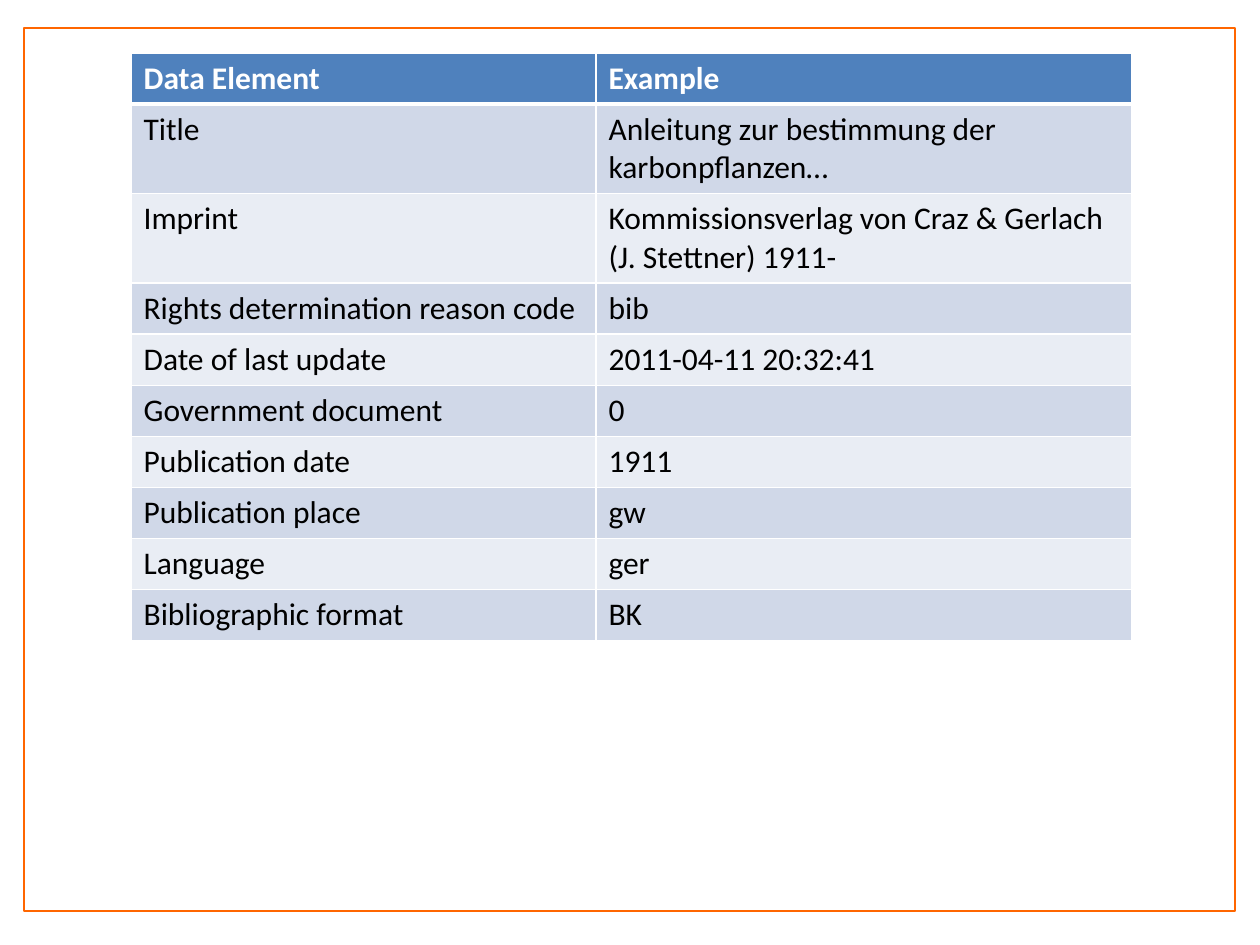
import pptx
import pptx.dml.color
import pptx.enum.shapes
import pptx.oxml.ns
import pptx.util
from lxml import etree

Inches = pptx.util.Inches
Pt = pptx.util.Pt

COLORS = {
    "white": "FFFFFF",
    "black": "000000",
    "frame": "FF6600",
    "header": "4F81BD",
    "odd_row": "D0D8E8",
    "even_row": "E9EDF4",
}

RECORD = [
    ("Data Element", "Example"),
    ("Title", "Anleitung zur bestimmung der karbonpflanzen…"),
    ("Imprint", "Kommissionsverlag von Craz & Gerlach (J. Stettner) 1911-"),
    ("Rights determination reason code", "bib"),
    ("Date of last update", "2011-04-11 20:32:41"),
    ("Government document", "0"),
    ("Publication date", "1911"),
    ("Publication place", "gw"),
    ("Language", "ger"),
    ("Bibliographic format", "BK"),
]


def rgb(name):
    return pptx.dml.color.RGBColor.from_string(COLORS[name])


class SlideBuilder:
    """Holds the text style and the slide being built."""

    font_name = "Calibri"
    font_size = Pt(18)

    def __init__(self, slide):
        self.slide = slide

    def frame(self, left, top, width, height):
        border = self.slide.shapes.add_shape(
            pptx.enum.shapes.MSO_SHAPE.RECTANGLE,
            Inches(left), Inches(top), Inches(width), Inches(height))
        border.shadow.inherit = False
        border.fill.solid()
        border.fill.fore_color.rgb = rgb("white")
        border.line.color.rgb = rgb("frame")
        border.line.width = Pt(1)

    def table(self, rows, left, top, column_widths, row_height):
        table = self.slide.shapes.add_table(
            len(rows), len(column_widths), Inches(left), Inches(top),
            Inches(sum(column_widths)), Inches(row_height * len(rows))).table
        for column, width in zip(table.columns, column_widths):
            column.width = Inches(width)
        for row_index, values in enumerate(rows):
            table.rows[row_index].height = Inches(row_height)
            for column_index, value in enumerate(values):
                self.cell(table.cell(row_index, column_index), value, row_index)

    def cell(self, cell, value, row_index):
        is_header = row_index == 0
        self.cell_borders(cell, top=3 if row_index == 1 else 1,
                          bottom=3 if is_header else 1)
        band = "odd_row" if row_index % 2 else "even_row"
        cell.fill.solid()
        cell.fill.fore_color.rgb = rgb("header" if is_header else band)
        run = cell.text_frame.paragraphs[0].add_run()
        run.text = value
        run.font.name = self.font_name
        run.font.size = self.font_size
        run.font.bold = is_header
        run.font.color.rgb = rgb("white" if is_header else "black")

    def cell_borders(self, cell, top, bottom):
        """Draw white borders; call before filling, as the schema puts lines first."""
        qn = pptx.oxml.ns.qn
        properties = cell._tc.get_or_add_tcPr()
        for side, points in (("L", 1), ("R", 1), ("T", top), ("B", bottom)):
            line = etree.SubElement(properties, qn(f"a:ln{side}"), w=str(Pt(points)))
            fill = etree.SubElement(line, qn("a:solidFill"))
            etree.SubElement(fill, qn("a:srgbClr"), val=COLORS["white"])


def main():
    presentation = pptx.Presentation()
    presentation.slide_width = Inches(10)
    presentation.slide_height = Inches(7.5)
    builder = SlideBuilder(
        presentation.slides.add_slide(presentation.slide_layouts[6]))
    builder.frame(0.19, 0.22, 9.61, 7.01)
    builder.table(RECORD, left=1.04, top=0.42,
                  column_widths=(3.69, 4.25), row_height=0.38)
    presentation.save("out.pptx")


if __name__ == "__main__":
    main()
